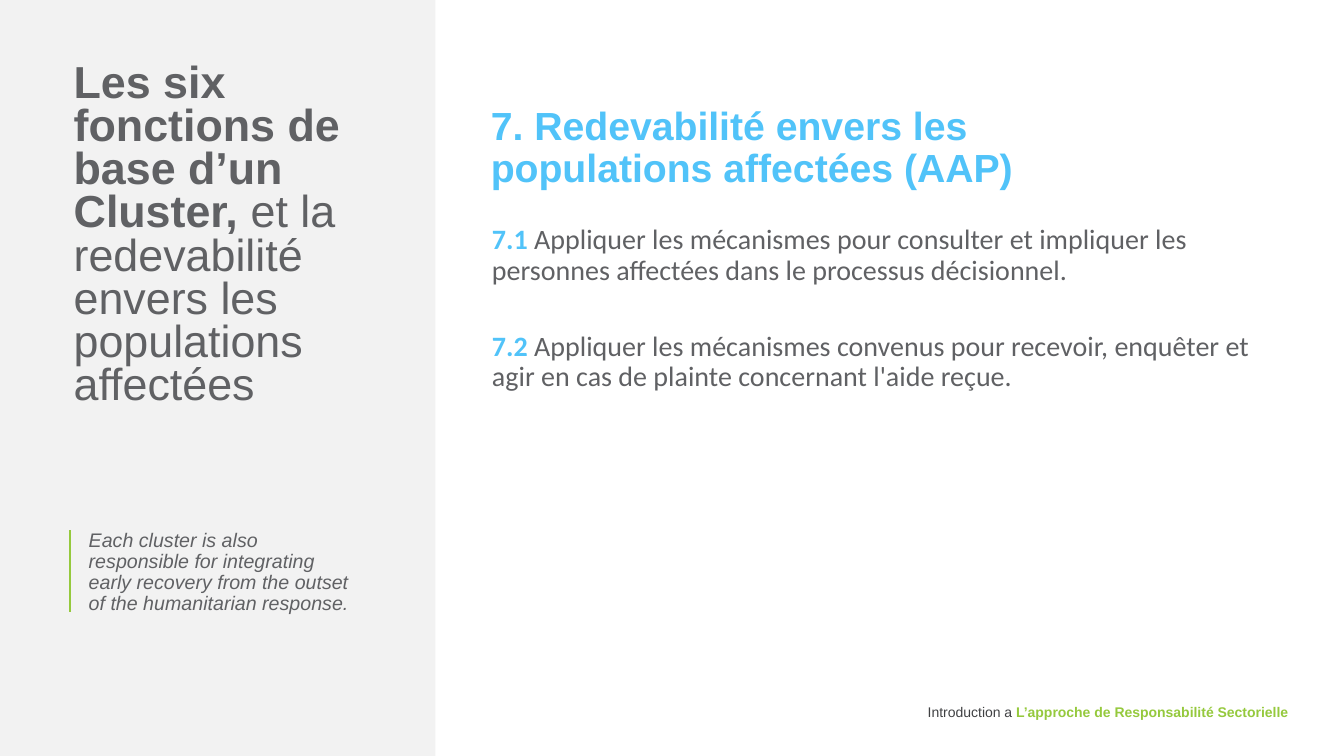
from lxml import etree
from pptx import Presentation
from pptx.dml.color import RGBColor
from pptx.enum import shapes, text
from pptx.oxml import ns
from pptx.util import Pt

COLORS = {
    "panel": "F2F2F2",
    "grey": "606164",
    "dark": "404143",
    "blue": "51C3F9",
    "green": "95C93D",
}


def color(name):
    return RGBColor.from_string(COLORS[name])


def add_panel(slide, left, top, width, height):
    shape = slide.shapes.add_shape(
        shapes.MSO_SHAPE.RECTANGLE, Pt(left), Pt(top), Pt(width), Pt(height))
    shape.shadow.inherit = False
    shape.fill.solid()
    shape.fill.fore_color.rgb = color("panel")
    shape.line.fill.background()


def add_rule(slide, x, top, bottom):
    line = slide.shapes.add_connector(
        shapes.MSO_CONNECTOR.STRAIGHT, Pt(x), Pt(top), Pt(x), Pt(bottom))
    line.line.color.rgb = color("green")
    line.line.width = Pt(1.5)
    etree.SubElement(line._element.spPr, ns.qn("a:effectLst"))


def add_text_box(slide, left, top, width, height):
    return slide.shapes.add_textbox(Pt(left), Pt(top), Pt(width), Pt(height))


def write(shape, paragraphs, size, font="Arial", spacing=0.9, gap=0,
          align=text.PP_ALIGN.LEFT, insets=(0, 3.6, 7.2, 3.6)):
    """Fill a shape with paragraphs, each a list of (text, colour, bold) runs."""
    frame = shape.text_frame
    frame.word_wrap = True
    frame.auto_size = text.MSO_AUTO_SIZE.NONE
    frame.vertical_anchor = text.MSO_ANCHOR.TOP
    (frame.margin_left, frame.margin_top,
     frame.margin_right, frame.margin_bottom) = map(Pt, insets)
    for index, runs in enumerate(paragraphs):
        paragraph = frame.add_paragraph() if index else frame.paragraphs[0]
        paragraph.alignment = align
        paragraph.line_spacing = spacing
        paragraph.space_before = Pt(gap if index else 0)
        paragraph.font.size = Pt(size)
        paragraph.font.name = font
        for content, color_name, bold in runs:
            for number, line in enumerate(content.split("\n")):
                if number:
                    paragraph.add_line_break()
                run = paragraph.add_run()
                run.text = line
                # Runs carry size and face too, as titles inherit their own
                run.font.size = Pt(size)
                run.font.name = font
                run.font.bold = bold
                run.font.color.rgb = color(color_name)
    return frame


def main():
    presentation = Presentation()
    presentation.slide_width, presentation.slide_height = Pt(960), Pt(540)
    slide = presentation.slides.add_slide(presentation.slide_layouts[5])

    add_panel(slide, 0, 0, 311, 540)
    title = slide.shapes.title
    title.left, title.top, title.width, title.height = map(
        Pt, (52.6, 42.5, 242.6, 262.8))
    slide.shapes._spTree.append(title._element)
    write(title, [[
        ("Les six fonctions de base d’un Cluster,", "grey", True),
        (" et la redevabilité envers les populations affectées", "grey", False),
    ]], 32, spacing=0.8)

    add_rule(slide, 49.7, 378.7, 437)
    note = write(add_text_box(slide, 63.4, 375.1, 242.6, 74.9), [[
        ("Each cluster is also\nresponsible for integrating\n"
         "early recovery from the outset\nof the humanitarian response.",
         "grey", False),
    ]], 14)
    for run in note.paragraphs[0].runs:
        run.font.italic = True

    write(add_text_box(slide, 350.6, 72.7, 534.2, 69.1), [
        [("7. Redevabilité envers les", "blue", True)],
        [("populations affectées (AAP)", "blue", True)],
    ], 28)

    write(add_text_box(slide, 351.4, 157.7, 555.8, 161.3), [
        [("7.1 ", "blue", True),
         ("Appliquer les mécanismes pour consulter et impliquer les personnes "
          "affectées dans le processus décisionnel.", "grey", False)],
        [("7.2 ", "blue", True),
         ("Appliquer les mécanismes convenus pour recevoir, enquêter et agir "
          "en cas de plainte concernant l'aide reçue.", "grey", False)],
    ], 20, font="Calibri", gap=33)

    write(add_text_box(slide, 612.7, 497.5, 307.4, 19.4), [[
        ("Introduction a ", "dark", False),
        ("L’approche de Responsabilité Sectorielle", "green", True),
    ]], 10, spacing=0.8, align=text.PP_ALIGN.RIGHT, insets=(7.2, 7.2, 0, 7.2))

    presentation.save("out.pptx")


if __name__ == "__main__":
    main()
